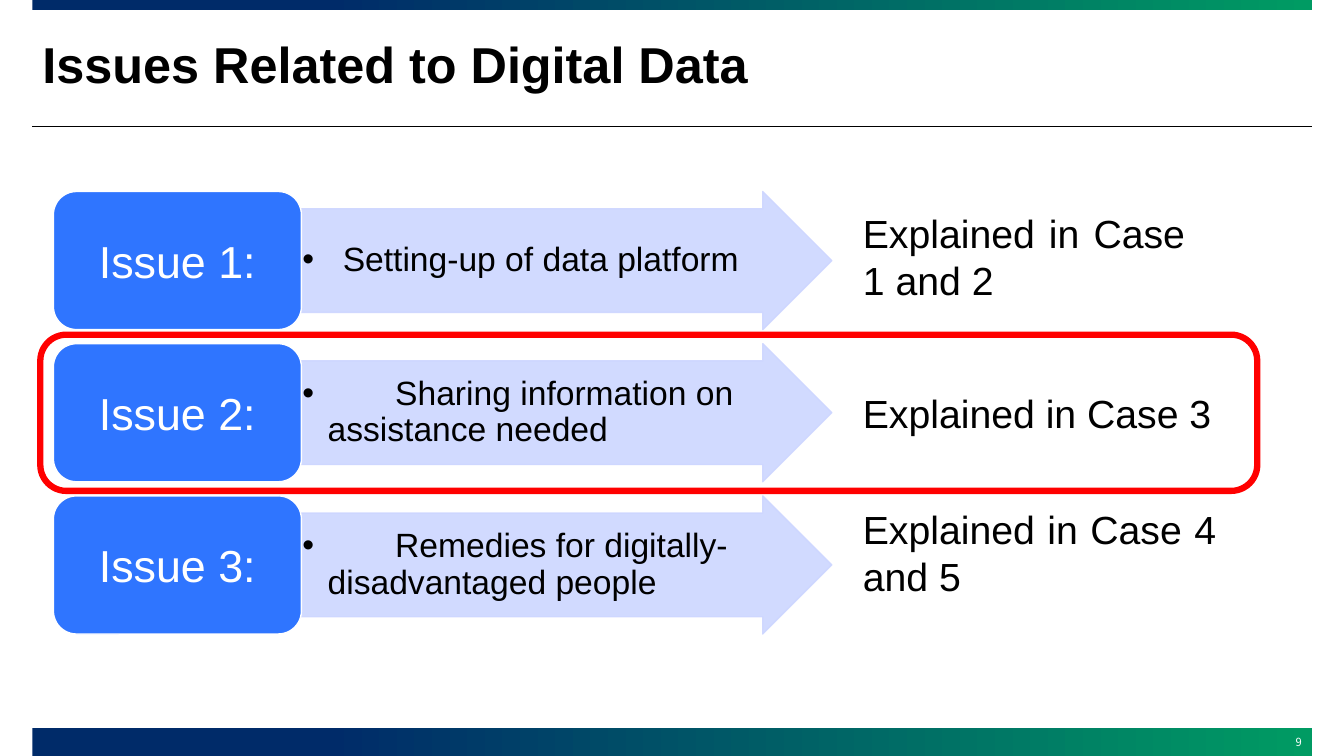
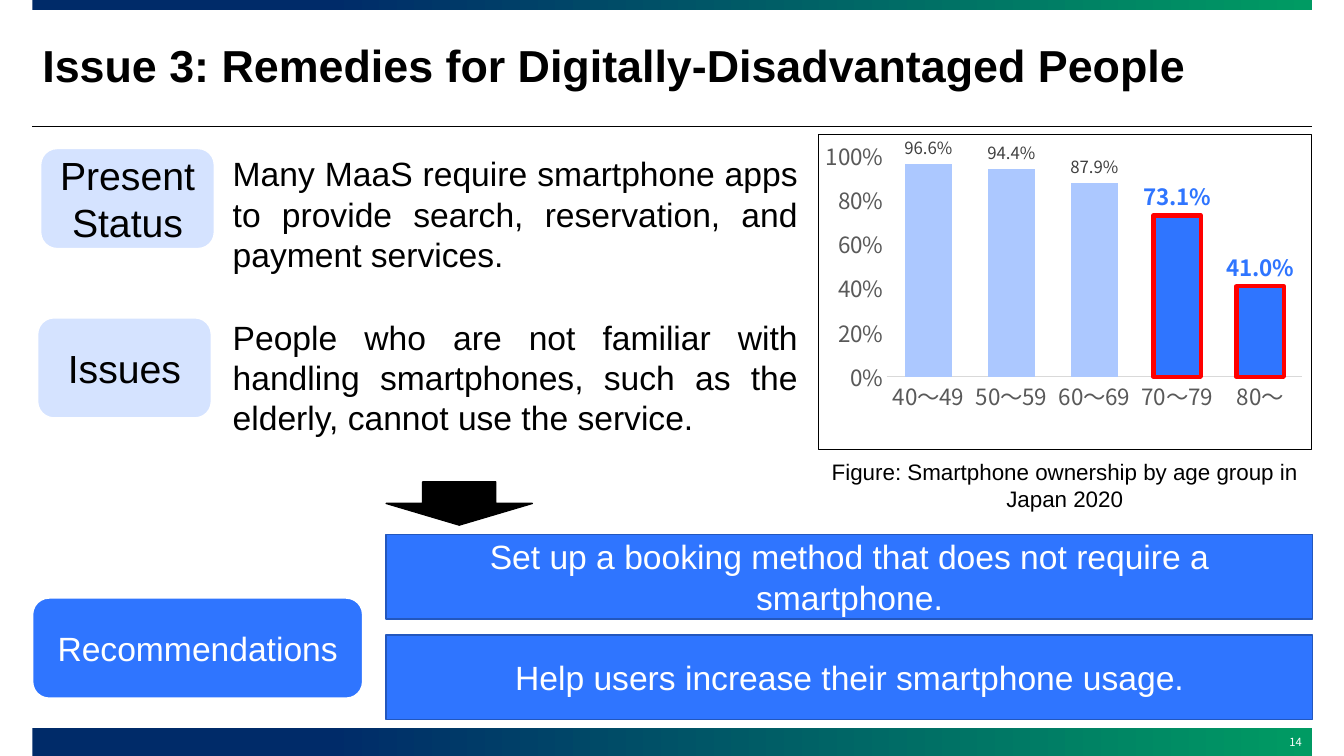
from dataclasses import dataclass

import lxml.etree as etree
import pptx
import pptx.chart.data
import pptx.dml.color
import pptx.enum.chart
import pptx.enum.shapes
import pptx.enum.text
import pptx.oxml
import pptx.oxml.ns
import pptx.util

SHAPE = pptx.enum.shapes.MSO_SHAPE
ALIGN = pptx.enum.text.PP_ALIGN
ANCHOR = pptx.enum.text.MSO_ANCHOR
qn = pptx.oxml.ns.qn
EMU_PER_PX = 9144  # 100 px to the inch


@dataclass(frozen=True)
class Theme:
    font: str = "Arial"
    number_font: str = "Noto Sans CJK JP"
    black: str = "000000"
    white: str = "FFFFFF"
    navy: str = "002B69"
    green: str = "009B63"
    blue: str = "2F75FF"
    blue_edge: str = "2357BD"
    light_blue: str = "D5E3FF"
    bar_blue: str = "ACC8FF"
    lilac: str = "CDD6FF"
    red: str = "FF0000"
    axis_text: str = "595959"
    axis_line: str = "D9D9D9"
    label_text: str = "404040"
    title: int = 36
    title_long: int = 32
    issue: int = 32
    heading: int = 28
    body: int = 24
    caption: int = 16
    data_label: int = 12
    page: int = 8


def px(n):
    return pptx.util.Emu(n * EMU_PER_PX)


def rgb(color):
    return pptx.dml.color.RGBColor.from_string(color)


class Deck:
    """Holds the theme, the presentation and the slide being filled."""

    def __init__(self, theme):
        self.theme = theme
        self.prs = pptx.Presentation()
        self.prs.slide_width, self.prs.slide_height = px(1333), px(750)
        self.slide = None

    def new_slide(self, title, page, size):
        t = self.theme
        self.slide = self.prs.slides.add_slide(self.prs.slide_layouts[5])
        s = self.slide.shapes.title
        s.left, s.top, s.width, s.height = map(px, (32, 9, 1269, 116))
        self.set_text(s, title, size, t.black, ALIGN.LEFT, bold=True,
                      spacing=0.9)
        self.band(0, 10)
        self.band(722, 28)
        self.rule(32, 125, 1301)
        self.text((1054, 717, 247, 33), page, t.page, t.white, ALIGN.RIGHT,
                  ANCHOR.MIDDLE, font=t.number_font, insets=(10, 5, 10, 0))

    def style_font(self, font, size, color, bold=False, name=None):
        font.name = name or self.theme.font
        font.size = pptx.util.Pt(size)
        font.bold = bold
        font.color.rgb = rgb(color)

    def set_text(self, s, text, size, color, align=ALIGN.CENTER,
                 anchor=ANCHOR.MIDDLE, bold=False, font=None, spacing=None,
                 insets=(10, 5, 10, 5)):
        tf = s.text_frame
        tf.text = text
        tf.word_wrap = True
        tf.auto_size = pptx.enum.text.MSO_AUTO_SIZE.NONE
        tf.vertical_anchor = anchor
        (tf.margin_left, tf.margin_top,
         tf.margin_right, tf.margin_bottom) = map(px, insets)
        p = tf.paragraphs[0]
        p.alignment = align
        p.line_spacing = spacing
        for r in p.runs:
            self.style_font(r.font, size, color, bold, font)
        return p

    def text(self, box, text, size, color, align=ALIGN.LEFT,
             anchor=ANCHOR.TOP, **style):
        s = self.slide.shapes.add_textbox(*map(px, box))
        self.set_text(s, text, size, color, align, anchor, **style)

    def shape(self, kind, box, fill=None, line=None, width=1, adjust=()):
        s = self.slide.shapes.add_shape(kind, *map(px, box))
        s.shadow.inherit = False
        for i, value in enumerate(adjust):
            s.adjustments[i] = value
        if fill:
            s.fill.solid()
            s.fill.fore_color.rgb = rgb(fill)
        else:
            s.fill.background()
        if line:
            s.line.color.rgb = rgb(line)
            s.line.width = pptx.util.Pt(width)
        else:
            s.line.fill.background()
        return s

    def band(self, top, height):
        s = self.shape(SHAPE.RECTANGLE, (32, top, 1269, height))
        s.fill.gradient()
        s.fill.gradient_angle = 0
        stops = ((0.23, self.theme.navy), (1, self.theme.green))
        for stop, (position, color) in zip(s.fill.gradient_stops, stops):
            stop.position = position
            stop.color.rgb = rgb(color)

    def rule(self, left, y, right):
        s = self.slide.shapes.add_connector(
            pptx.enum.shapes.MSO_CONNECTOR.STRAIGHT,
            px(left), px(y), px(right), px(y))
        s.line.color.rgb = rgb(self.theme.black)
        s.line.width = pptx.util.Pt(0.5)
        etree.SubElement(s._element.spPr, qn("a:effectLst"))

    def label(self, box, text, size, fill, color, width=1.5):
        """Rounded block with a white edge."""
        s = self.shape(SHAPE.ROUNDED_RECTANGLE, box, fill,
                       self.theme.white, width)
        self.set_text(s, text, size, color)

    def bar(self, box, text):
        """Square-cornered recommendation."""
        s = self.shape(SHAPE.RECTANGLE, box, self.theme.blue,
                       self.theme.blue_edge)
        self.set_text(s, text, self.theme.body, self.theme.white)

    def bullet_arrow(self, box, text, tab):
        """Translucent arrow whose bullet text starts at a tab stop."""
        t = self.theme
        s = self.shape(SHAPE.RIGHT_ARROW, box, t.lilac, t.lilac,
                       adjust=(0.75, 0.5))
        for clr in s._element.spPr.iter(qn("a:srgbClr")):
            etree.SubElement(clr, qn("a:alpha"), val="90000")
        p = self.set_text(s, "\t" + text, t.body, t.black, ALIGN.LEFT,
                          spacing=0.9, insets=(2, 2, 2, 2))
        pPr = p._p.get_or_add_pPr()
        pPr.set("marL", str(px(25)))
        pPr.set("indent", str(-px(25)))
        etree.SubElement(pPr, qn("a:buFont"), typeface=t.font)
        etree.SubElement(pPr, qn("a:buChar"), char="•")
        tabs = etree.SubElement(pPr, qn("a:tabLst"))
        etree.SubElement(tabs, qn("a:tab"), pos=str(px(tab)), algn="l")

    def column_chart(self, box, categories, values, highlighted):
        t = self.theme
        data = pptx.chart.data.CategoryChartData(number_format="0.0%")
        data.categories = categories
        data.add_series("Series 1", values)
        chart = self.slide.shapes.add_chart(
            pptx.enum.chart.XL_CHART_TYPE.COLUMN_CLUSTERED,
            *map(px, box), data).chart
        chart.has_title = chart.has_legend = False
        self.style_font(chart.font, t.caption, t.black, name=t.number_font)

        for axis in (chart.category_axis, chart.value_axis):
            axis.major_tick_mark = pptx.enum.chart.XL_TICK_MARK.NONE
            axis.has_major_gridlines = False
            self.style_font(axis.tick_labels.font, t.caption, t.axis_text,
                            name=t.number_font)
        line = chart.category_axis.format.line
        line.color.rgb = rgb(t.axis_line)
        line.width = pptx.util.Pt(0.75)
        axis = chart.value_axis
        axis.format.line.fill.background()
        axis.minimum_scale, axis.maximum_scale, axis.major_unit = 0, 1, 0.2
        axis.tick_labels.number_format = "0%"
        axis.tick_labels.number_format_is_linked = False

        plot = chart.plots[0]
        plot.gap_width = 75
        plot.vary_by_categories = False
        series = plot.series[0]
        series.format.fill.solid()
        series.format.fill.fore_color.rgb = rgb(t.blue)
        outside = pptx.enum.chart.XL_LABEL_POSITION.OUTSIDE_END
        labels = series.data_labels
        labels.show_value = True
        labels.position = outside
        labels.number_format = "0.0%"
        labels.number_format_is_linked = False
        self.style_font(labels.font, t.data_label, t.label_text,
                        name=t.number_font)
        for i in range(len(values)):
            point = series.points[i]
            point.format.fill.solid()
            point.format.fill.fore_color.rgb = rgb(t.bar_blue)
            if i in highlighted:
                point.format.fill.fore_color.rgb = rgb(t.blue)
                point.format.line.color.rgb = rgb(t.red)
                point.format.line.width = pptx.util.Pt(3)
                self.style_font(point.data_label.font, t.caption, t.blue,
                                True, t.number_font)
                point.data_label.position = outside
        self.frame_chart(chart)

    def frame_chart(self, chart):
        """Give the chart a white, thinly outlined area and a fixed plot."""
        ns = pptx.oxml.ns.nsdecls("c", "a")
        chart._chartSpace.find(qn("c:chart")).addnext(pptx.oxml.parse_xml(
            f'<c:spPr {ns}><a:solidFill><a:srgbClr val="{self.theme.white}"/>'
            f'</a:solidFill><a:ln w="3175"><a:solidFill>'
            f'<a:srgbClr val="{self.theme.black}"/></a:solidFill></a:ln>'
            f'</c:spPr>'))
        area = chart._chartSpace.find(".//" + qn("c:plotArea"))
        for old in area.findall(qn("c:layout")):
            area.remove(old)
        layout = etree.Element(qn("c:layout"))
        manual = etree.SubElement(layout, qn("c:manualLayout"))
        for key, val in (("layoutTarget", "inner"), ("xMode", "edge"),
                         ("yMode", "edge"), ("x", "0.14"), ("y", "0.07"),
                         ("w", "0.84"), ("h", "0.7")):
            etree.SubElement(manual, qn("c:" + key), val=val)
        area.insert(0, layout)


def issues_slide(deck):
    t = deck.theme
    deck.new_slide("Issues Related to Digital Data", "9", t.title)
    issues = (
        ("Setting-up of data platform", 40),
        ("Sharing information on assistance needed", 92),
        ("Remedies for digitally- disadvantaged people", 92),
    )
    for i, (issue, tab) in enumerate(issues):
        top = 190 + 151 * i
        deck.bullet_arrow((298, top, 527, 137), issue, tab)
        deck.label((53, top, 246, 137), f"Issue {i + 1}:", t.issue,
                   t.blue, t.white, width=1)
    cases = (
        ((846, 202, 339, 104), "Explained in Case 1 and 2", ALIGN.JUSTIFY),
        ((846, 381, 380, 57), "Explained in Case 3", ALIGN.LEFT),
        ((846, 496, 370, 104), "Explained in Case 4 and 5", ALIGN.JUSTIFY),
    )
    for box, text, align in cases:
        deck.text(box, text, t.heading, t.black, align, ANCHOR.MIDDLE)
    deck.shape(SHAPE.ROUNDED_RECTANGLE, (40, 332, 1207, 155),
               line=t.red, width=4.5)


def remedies_slide(deck):
    t = deck.theme
    deck.new_slide("Issue 3: Remedies for Digitally-Disadvantaged People",
                   "14", t.title_long)
    points = (
        ((40, 147), "Present Status", 147,
         "Many MaaS require smartphone apps to provide search, "
         "reservation, and payment services."),
        ((37, 315), "Issues", 309,
         "People who are not familiar with handling smartphones, such as "
         "the elderly, cannot use the service."),
    )
    for corner, name, top, text in points:
        deck.text((221, top, 580, 131), text, t.body, t.black, ALIGN.JUSTIFY)
        deck.label((*corner, 173, 100), name, t.heading, t.light_blue, t.black)
    deck.column_chart((811, 133, 490, 313),
                      ("40～49", "50～59", "60～69", "70～79", "80～"),
                      (0.966, 0.944, 0.879, 0.731, 0.41), highlighted=(3, 4))
    deck.text((811, 450, 490, 64),
              "Figure: Smartphone ownership by age group in Japan 2020",
              t.caption, t.black, ALIGN.CENTER)
    deck.shape(SHAPE.DOWN_ARROW, (383, 478, 145, 43), t.black, t.black)
    recommendations = (
        "Set up a booking method that does not require a smartphone.",
        "Help users increase their smartphone usage.",
    )
    for i, text in enumerate(recommendations):
        deck.bar((383, 530 + 100 * i, 919, 84), text)
    deck.label((32, 593, 328, 100), "Recommendations", t.body, t.blue, t.white)


def main():
    deck = Deck(Theme())
    issues_slide(deck)
    remedies_slide(deck)
    deck.prs.save("out.pptx")


if __name__ == "__main__":
    main()
